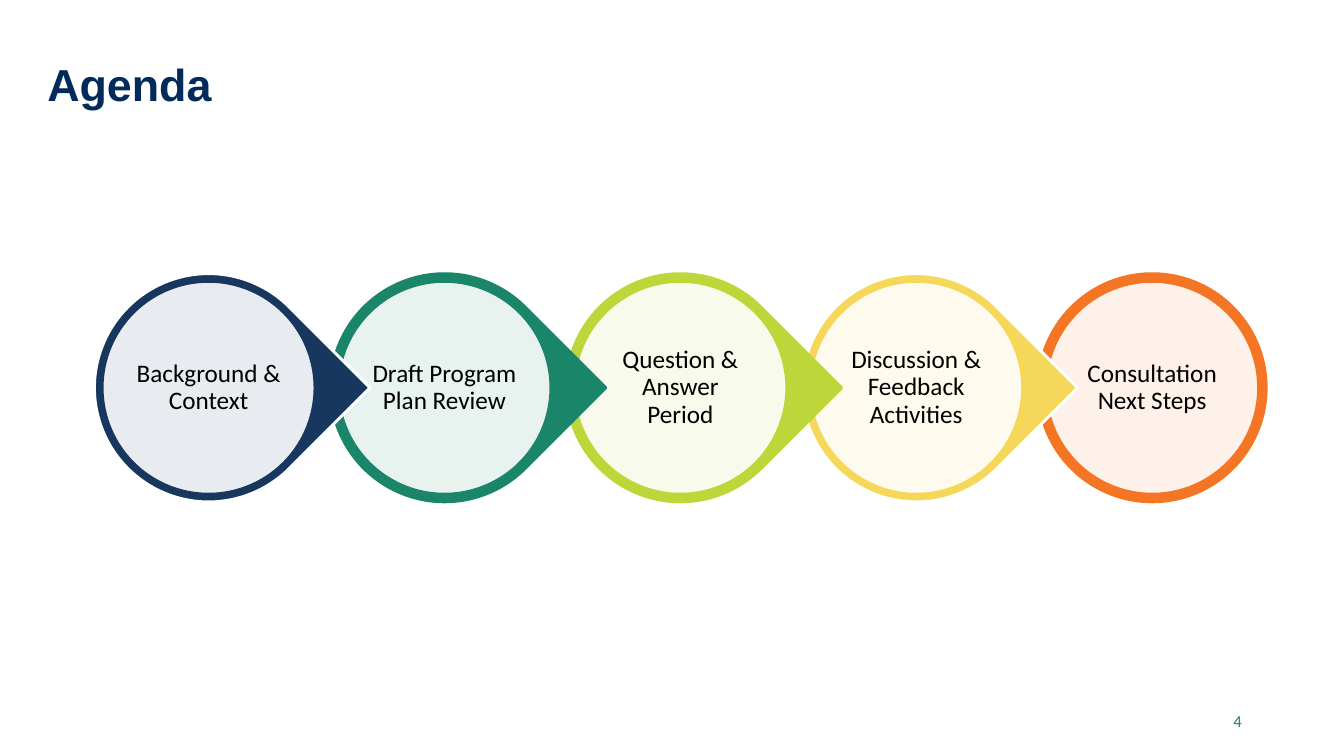
from dataclasses import dataclass
from typing import Any

from lxml import etree
from pptx import Presentation
from pptx.dml.color import RGBColor
from pptx.enum.shapes import MSO_SHAPE
from pptx.enum.text import MSO_ANCHOR, MSO_AUTO_SIZE, PP_ALIGN
from pptx.oxml.ns import qn
from pptx.util import Pt

ELLIPSE, TEARDROP = MSO_SHAPE.OVAL, MSO_SHAPE.TEAR
LEFT, CENTER, RIGHT = PP_ALIGN.LEFT, PP_ALIGN.CENTER, PP_ALIGN.RIGHT
MIDDLE, BOTTOM = MSO_ANCHOR.MIDDLE, MSO_ANCHOR.BOTTOM
NO_AUTOFIT = MSO_AUTO_SIZE.NONE

WHITE, BLACK, NAVY, GREEN = "FFFFFF", "000000", "022B5B", "1A8569"
FIRST_CENTER, STEP_PITCH, CENTER_Y = 149, 168.5, 277
DROP_SIZE, DISC_SIZE, LABEL_SIZE = 163, 152, 108.5
DISC_OPACITY = 90


@dataclass(frozen=True)
class Step:
    """One agenda step, with its label lines, colours and outer outline."""

    lines: tuple[str, ...]
    color: str
    edge: str
    outline: Any = TEARDROP
    rotation: int = 45


@dataclass(frozen=True)
class TextStyle:
    """The look of a text frame, with insets in left, top, right, bottom order."""

    font: str
    size: float
    color: str
    align: Any
    anchor: Any
    insets: tuple[float, float, float, float]
    spacing: float = 1.0
    bold: bool = False


STEPS = (
    Step(("Background & Context",), "17375E", WHITE),
    Step(("Draft Program Plan Review",), GREEN, GREEN),
    Step(("Question & Answer Period",), "BDD63A", "BDD63A"),
    Step(("Discussion &", "Feedback Activities"), "F5D759", WHITE),
    Step(("Consultation Next Steps",), "F47523", "F47523", ELLIPSE, 0),
)
TITLE_STYLE = TextStyle("Arial", 32, NAVY, LEFT, BOTTOM, (7.2, 3.6, 7.2, 0), 0.8, True)
LABEL_STYLE = TextStyle("Calibri", 18, BLACK, CENTER, MIDDLE, (2, 2, 2, 2), 0.9)
NUMBER_STYLE = TextStyle("Calibri", 12, GREEN, RIGHT, MIDDLE, (7.2, 3.6, 7.2, 3.6))


def rgb(color: str) -> RGBColor:
    """Return the colour for a hex string."""
    return RGBColor.from_string(color)


def apply(target: Any, values: dict[str, Any]) -> None:
    """Set every named value on the target."""
    for name, value in values.items():
        setattr(target, name, value)


def place(shape: Any, left: float, top: float, width: float, height: float) -> None:
    """Move and size a shape, in points."""
    apply(shape, {"left": Pt(left), "top": Pt(top), "width": Pt(width), "height": Pt(height)})


def write(shape: Any, lines: tuple[str, ...], style: TextStyle) -> None:
    """Fill a text frame with one paragraph per line."""
    frame = shape.text_frame
    left, top, right, bottom = map(Pt, style.insets)
    apply(frame, {
        "text": "\n".join(lines), "word_wrap": True, "auto_size": NO_AUTOFIT,
        "vertical_anchor": style.anchor, "margin_left": left, "margin_top": top,
        "margin_right": right, "margin_bottom": bottom,
    })
    for para in frame.paragraphs:
        apply(para, {"alignment": style.align, "line_spacing": style.spacing})
        apply(para.font, {"name": style.font, "size": Pt(style.size), "bold": style.bold})
        para.font.color.rgb = rgb(style.color)


def add_text(page: Any, frame: tuple[float, float, float, float],
             lines: tuple[str, ...], style: TextStyle) -> None:
    """Add a text box."""
    write(page.shapes.add_textbox(*map(Pt, frame)), lines, style)


def centered(center: float, size: float) -> tuple[float, float, float, float]:
    """Return a square frame centred on the row of steps."""
    return center - size / 2, CENTER_Y - size / 2, size, size


def add_outline(page: Any, kind: Any, center: float, size: float, fill: str, edge: str) -> Any:
    """Add a filled shape with a two-point edge."""
    shape = page.shapes.add_shape(kind, *map(Pt, centered(center, size)))
    shape.shadow.inherit = False
    shape.fill.solid()
    shape.fill.fore_color.rgb = rgb(fill)
    shape.line.color.rgb = rgb(edge)
    shape.line.width = Pt(2)
    return shape


def set_opacity(shape: Any, percent: int) -> None:
    """Make the solid fill of a shape partly transparent."""
    color = shape.fill._xPr.find(qn("a:solidFill"))[0]
    etree.SubElement(color, qn("a:alpha")).set("val", str(percent * 1000))


def add_step(page: Any, step: Step, center: float) -> None:
    """Draw one step as an outline, a pale disc and a label."""
    outline = add_outline(page, step.outline, center, DROP_SIZE, step.color, step.edge)
    outline.rotation = step.rotation
    disc = add_outline(page, ELLIPSE, center, DISC_SIZE, WHITE, step.color)
    set_opacity(disc, DISC_OPACITY)
    add_text(page, centered(center, LABEL_SIZE), step.lines, LABEL_STYLE)


def main() -> None:
    """Build the agenda slide and save it."""
    deck = Presentation()
    apply(deck, {"slide_width": Pt(960), "slide_height": Pt(540)})
    page = deck.slides.add_slide(deck.slide_layouts[5])
    title = page.shapes.title
    place(title, 26.6, 21.6, 888.5, 56.9)
    write(title, ("Agenda",), TITLE_STYLE)
    for index, step in reversed(list(enumerate(STEPS))):
        add_step(page, step, FIRST_CENTER + index * STEP_PITCH)
    add_text(page, (678.2, 500.4, 216, 28.8), ("4",), NUMBER_STYLE)
    deck.save("out.pptx")


if __name__ == "__main__":
    main()
